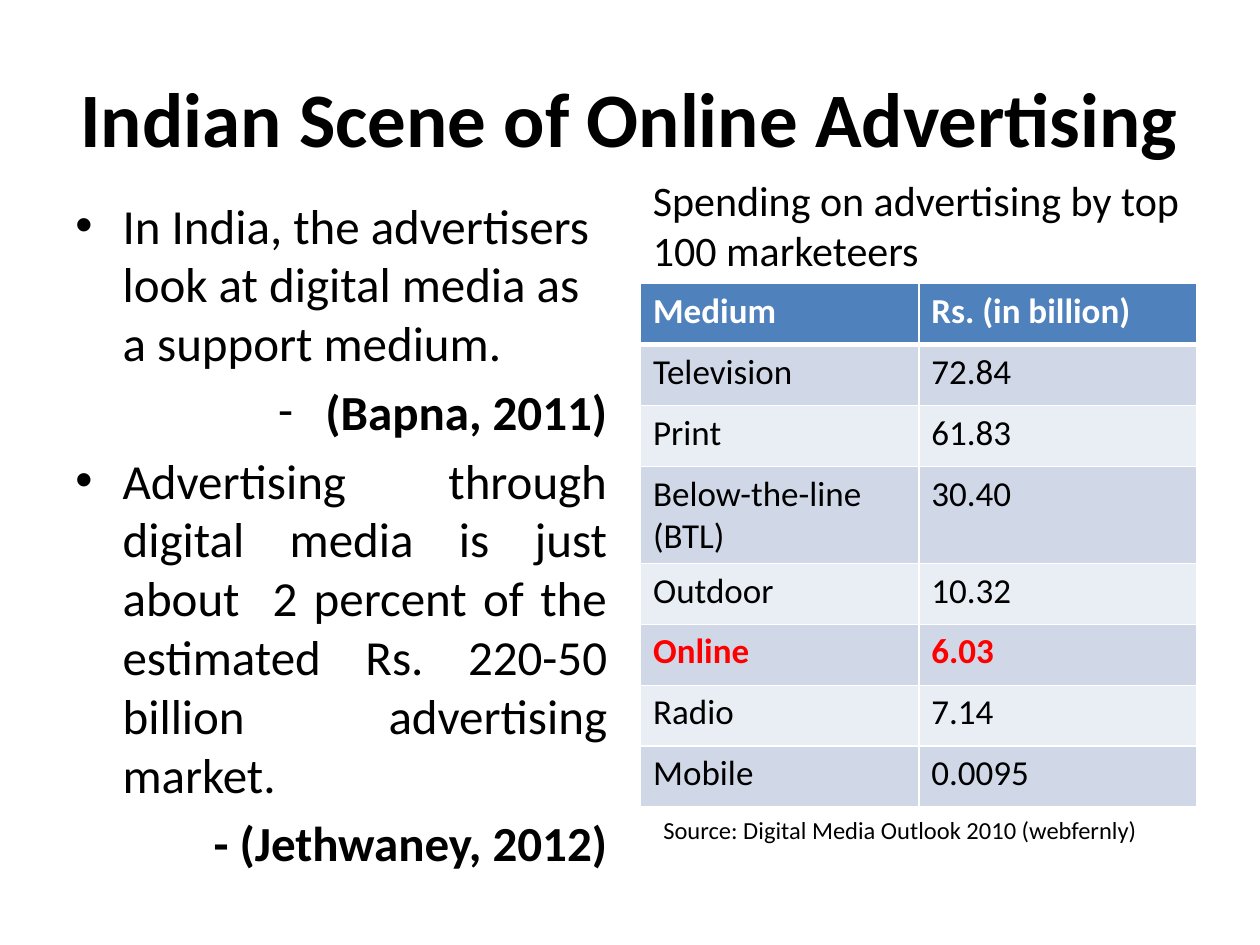
from dataclasses import dataclass
from lxml import etree
from pptx import Presentation
from pptx.dml.color import RGBColor
from pptx.enum import text as t
from pptx.oxml import ns
from pptx.util import Pt


@dataclass(frozen=True)
class Theme:
    font: str = "Calibri"
    ink: str = "000000"
    white: str = "FFFFFF"
    head: str = "4F81BD"
    bands: tuple = ("D0D8E8", "E9EDF4")
    alert: str = "FF0000"
    title: int = 44
    body: int = 28
    lead: int = 24
    cell: int = 20
    note: int = 14


THEME = Theme()
ALIGN = t.PP_ALIGN
POINTS = [
    ("In India, the advertisers look at digital media as a support medium.",
     ALIGN.LEFT, "•", False),
    ("(Bapna, 2011)", ALIGN.RIGHT, "-", True),
    ("Advertising through digital media is just about  2 percent of the "
     "estimated Rs. 220-50 billion advertising market.",
     ALIGN.JUSTIFY, "•", False),
    ("- (Jethwaney, 2012)", ALIGN.RIGHT, None, True),
]
SPEND = [
    ("Medium", "Rs. (in billion)"),
    ("Television", "72.84"),
    ("Print", "61.83"),
    ("Below-the-line (BTL)", "30.40"),
    ("Outdoor", "10.32"),
    ("Online", "6.03"),
    ("Radio", "7.14"),
    ("Mobile", "0.0095"),
]


def style(para, size, color=THEME.ink, bold=False):
    for run in para.runs:
        run.font.name = THEME.font
        run.font.size = Pt(size)
        run.font.bold = bold
        run.font.color.rgb = RGBColor.from_string(color)


def add_text(slide, area, words, size, bold=False, align=ALIGN.LEFT,
             anchor=t.MSO_ANCHOR.TOP):
    frame = slide.shapes.add_textbox(*map(Pt, area)).text_frame
    frame.word_wrap = True
    frame.vertical_anchor = anchor
    frame.text = words
    para = frame.paragraphs[0]
    para.alignment = align
    style(para, size, bold=bold)


def set_bullet(para, mark):
    props = para._p.get_or_add_pPr()
    props.set("marL", str(Pt(27)))
    props.set("indent", str(Pt(-27)))
    if mark:
        face = etree.SubElement(props, ns.qn("a:buFont"))
        face.set("typeface", "Arial" if mark == "•" else THEME.font)
        etree.SubElement(props, ns.qn("a:buChar")).set("char", mark)
    else:
        etree.SubElement(props, ns.qn("a:buNone"))


def add_list(slide, area, points):
    frame = slide.shapes.add_textbox(*map(Pt, area)).text_frame
    frame.word_wrap = True
    frame.text = "\n".join(point[0] for point in points)
    for para, (_, align, mark, bold) in zip(frame.paragraphs, points):
        para.alignment = align
        para.space_before = Pt(THEME.body * 0.2)
        set_bullet(para, mark)
        style(para, THEME.body, bold=bold)


def set_edges(cell, widths):
    props = cell._tc.get_or_add_tcPr()
    for spot, (side, width) in enumerate(zip("LRTB", widths)):
        line = etree.Element(ns.qn(f"a:ln{side}"), w=str(Pt(width)))
        fill = etree.SubElement(line, ns.qn("a:solidFill"))
        etree.SubElement(fill, ns.qn("a:srgbClr")).set("val", THEME.white)
        props.insert(spot, line)


def add_grid(slide, area, rows):
    grid = slide.shapes.add_table(
        len(rows), len(rows[0]), *map(Pt, area)).table
    for r, row in enumerate(rows):
        grid.rows[r].height = Pt(55.4 if "BTL" in row[0] else 34.85)
        if r == 0:
            fill, color = THEME.head, THEME.white
        else:
            fill = THEME.bands[(r - 1) % 2]
            color = THEME.alert if row[0] == "Online" else THEME.ink
        for c, words in enumerate(row):
            cell = grid.cell(r, c)
            cell.text = words
            cell.fill.solid()
            cell.fill.fore_color.rgb = RGBColor.from_string(fill)
            set_edges(cell, (1, 1, 3 if r == 1 else 1, 3 if r == 0 else 1))
            style(cell.text_frame.paragraphs[0], THEME.cell, color,
                  color != THEME.ink)


def main():
    deck = Presentation()
    deck.slide_width, deck.slide_height = Pt(720), Pt(540)
    slide = deck.slides.add_slide(deck.slide_layouts[6])
    add_text(slide, (36, 21.6, 648, 90), "Indian Scene of Online Advertising",
             THEME.title, True, ALIGN.CENTER, t.MSO_ANCHOR.MIDDLE)
    add_list(slide, (36, 108, 318, 374.4), POINTS)
    add_grid(slide, (366, 162, 318, 299), SPEND)
    add_text(slide, (372, 462, 324, 24.5),
             "Source: Digital Media Outlook 2010 (webfernly)", THEME.note)
    add_text(slide, (366, 96, 318, 87),
             "Spending on advertising by top 100 marketeers", THEME.lead)
    deck.save("out.pptx")


if __name__ == "__main__":
    main()
